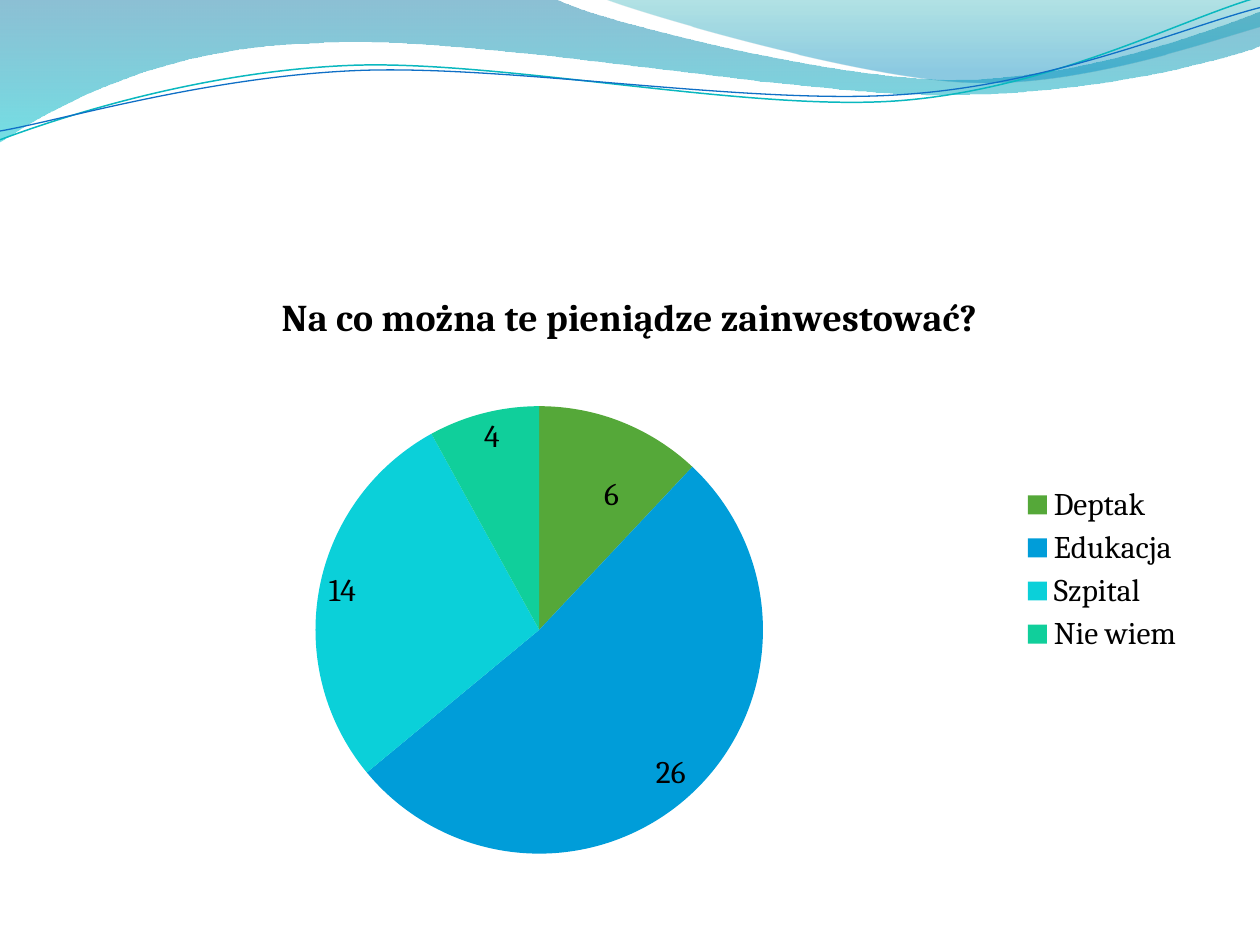
import math

from lxml import etree
from pptx import Presentation
from pptx import util as u
from pptx.chart.data import CategoryChartData
from pptx.dml.color import RGBColor
from pptx.enum import chart as kinds
from pptx.oxml.ns import qn

WIDTH, HEIGHT = u.Inches(10), u.Inches(7.5)
FONT = "Cambria"
BLACK = RGBColor(0x00, 0x00, 0x00)
DEEP_BLUE = RGBColor(0x00, 0x74, 0xA1)
CYAN = RGBColor(0x00, 0xC6, 0xCF)
TEAL = RGBColor(0x00, 0xA1, 0xA9)
SKY = RGBColor(0x00, 0x8B, 0xBF)
TEAL_LINE = RGBColor(0x0A, 0xB8, 0xBF)
BLUE_LINE = RGBColor(0x0F, 0x6F, 0xC6)
CURVE_TILT = -2.7

QUESTION = "Na co można te pieniądze zainwestować?"
ANSWERS = {
    "Deptak": (6, RGBColor(0x55, 0xA8, 0x39)),
    "Edukacja": (26, RGBColor(0x00, 0x9D, 0xD9)),
    "Szpital": (14, RGBColor(0x0B, 0xD0, 0xD9)),
    "Nie wiem": (4, RGBColor(0x10, 0xCF, 0x9B)),
}

# Outlines in inches: a point is a straight step, six numbers are a Bézier step.
BROAD_WAVE = [
    (0, 0), (4.4, -0.01), (4.76, 0.17, 6.64, 0.63, 7.58, 0.63),
    (8.53, 0.63, 9.58, 0.26, 10, 0.09), (10.01, 0.36),
    (9.83, 0.44, 8.7, 0.76, 7.46, 0.75), (6.22, 0.75, 3.82, 0.28, 2.57, 0.34),
    (1.29, 0.36, 0.46, 0.83, -0.01, 1.13), (0, 0),
]
RIGHT_WAVE = [
    (4.79, -0.01), (5.09, 0.11, 6.82, 0.62, 7.69, 0.65),
    (8.56, 0.69, 9.61, 0.32, 10, 0.21), (10, 0), (4.79, -0.01),
]
TEAL_CURVE = [
    (0, 1.11), (0.48, 0.93, 1.58, 0.57, 2.77, 0.52),
    (3.95, 0.47, 5.93, 0.89, 7.13, 0.8), (8.33, 0.71, 9.38, 0.15, 9.98, -0.02),
]
BLUE_CURVE = [
    (0, 1.04), (0.47, 0.96, 1.64, 0.61, 2.83, 0.56),
    (4.03, 0.51, 5.97, 0.84, 7.17, 0.75), (8.36, 0.67, 9.41, 0.21, 10, 0.06),
]


def add_outline(page, box, steps, close, tilt=0):
    """Add a curved outline whose untilted frame is box (left, top, width, height)."""
    left, top, width, height = box
    builder = page.shapes.build_freeform(u.Inches(left), u.Inches(top))
    builder.add_line_segments(
        [(u.Inches(left + width), u.Inches(top + height))], close=close)
    shape = builder.convert_to_shape()
    shape.shadow.inherit = False
    shape.rotation = tilt

    sine, cosine = math.sin(math.radians(-tilt)), math.cos(math.radians(-tilt))
    outline = shape._element.find(".//" + qn("a:path"))
    for old in list(outline):
        outline.remove(old)
    for index, step in enumerate(steps):
        name = "moveTo" if index == 0 else "lnTo" if len(step) == 2 else "cubicBezTo"
        command = etree.SubElement(outline, qn(f"a:{name}"))
        for x, y in zip(step[::2], step[1::2]):
            across, down = x - left - width / 2, y - top - height / 2
            point = etree.SubElement(command, qn("a:pt"))
            point.set("x", str(u.Inches(across * cosine - down * sine + width / 2)))
            point.set("y", str(u.Inches(across * sine + down * cosine + height / 2)))
    if close:
        etree.SubElement(outline, qn("a:close"))
    return shape


def add_wave(page, box, steps, stops):
    """Add a shape with a see-through gradient from top to bottom."""
    wave = add_outline(page, box, steps, close=True)
    wave.line.fill.background()
    wave.fill.gradient()
    wave.fill.gradient_angle = 270
    for stop, (position, color, _) in zip(wave.fill.gradient_stops, stops):
        stop.position = position
        stop.color.rgb = color
    for color, (_, _, opacity) in zip(wave._element.iter(qn("a:srgbClr")), stops):
        etree.SubElement(color, qn("a:alpha")).set("val", str(opacity * 1000))


def add_curve(page, box, steps, color, width):
    curve = add_outline(page, box, steps, close=False, tilt=CURVE_TILT)
    curve.fill.background()
    curve.line.color.rgb = color
    curve.line.width = u.Pt(width)


def place(parent, index, **values):
    """Give a chart part a manual layout, in shares of the chart's size."""
    for old in parent.findall(qn("c:layout")):
        parent.remove(old)
    layout = etree.Element(qn("c:layout"))
    manual = etree.SubElement(layout, qn("c:manualLayout"))
    for name, value in values.items():
        etree.SubElement(manual, qn(f"c:{name}")).set("val", str(value))
    parent.insert(index, layout)


def set_font(font, size, bold=False):
    font.name = FONT
    font.size = u.Pt(size)
    font.bold = bold
    font.color.rgb = BLACK


def add_pie(page):
    data = CategoryChartData()
    data.categories = list(ANSWERS)
    data.add_series(QUESTION, [value for value, _ in ANSWERS.values()])
    chart = page.shapes.add_chart(
        kinds.XL_CHART_TYPE.PIE, int(WIDTH * 0.05), u.Inches(2.12),
        int(WIDTH * 0.9), int(HEIGHT * 0.64), data).chart
    set_font(chart.font, 18)

    chart.has_title = True
    span = chart.chart_title.text_frame.paragraphs[0].add_run()
    span.text = QUESTION
    set_font(span.font, 21.6, bold=True)

    chart.has_legend = True
    chart.legend.position = kinds.XL_LEGEND_POSITION.RIGHT
    chart.legend.include_in_layout = False
    set_font(chart.legend.font, 18)

    plot = chart.plots[0]
    plot.vary_by_categories = True
    plot_area = chart._chartSpace.find(".//" + qn("c:plotArea"))
    place(plot_area, 0, layoutTarget="inner", xMode="edge", yMode="edge",
          x=0.22, y=0.23, w=0.4, h=0.74)

    series = plot.series[0]
    for index, (_, color) in enumerate(ANSWERS.values()):
        fill = series.points[index].format.fill
        fill.solid()
        fill.fore_color.rgb = color

    labels = series.data_labels
    labels.show_value = True
    labels.position = kinds.XL_LABEL_POSITION.BEST_FIT
    set_font(labels.font, 18)
    first_label = series.points[0].data_label
    set_font(first_label.font, 18)
    first_label.position = kinds.XL_LABEL_POSITION.INSIDE_END
    place(labels._element.find(qn("c:dLbl")), 1, x=0, y=0.08)


def main():
    deck = Presentation()
    deck.slide_width, deck.slide_height = WIDTH, HEIGHT
    page = deck.slides.add_slide(deck.slide_layouts[6])
    add_wave(page, (-0.01, -0.01, 10.02, 1.14), BROAD_WAVE,
             [(0, DEEP_BLUE, 45), (1, CYAN, 55)])
    add_wave(page, (4.79, -0.01, 5.21, 0.7), RIGHT_WAVE,
             [(0, TEAL, 30), (0.8, SKY, 45)])
    add_curve(page, (-0.02, 0.22, 10.02, 0.71), TEAL_CURVE, TEAL_LINE, 0.85)
    add_curve(page, (-0.02, 0.3, 10.03, 0.58), BLUE_CURVE, BLUE_LINE, 0.75)
    add_pie(page)
    deck.save("out.pptx")


if __name__ == "__main__":
    main()
